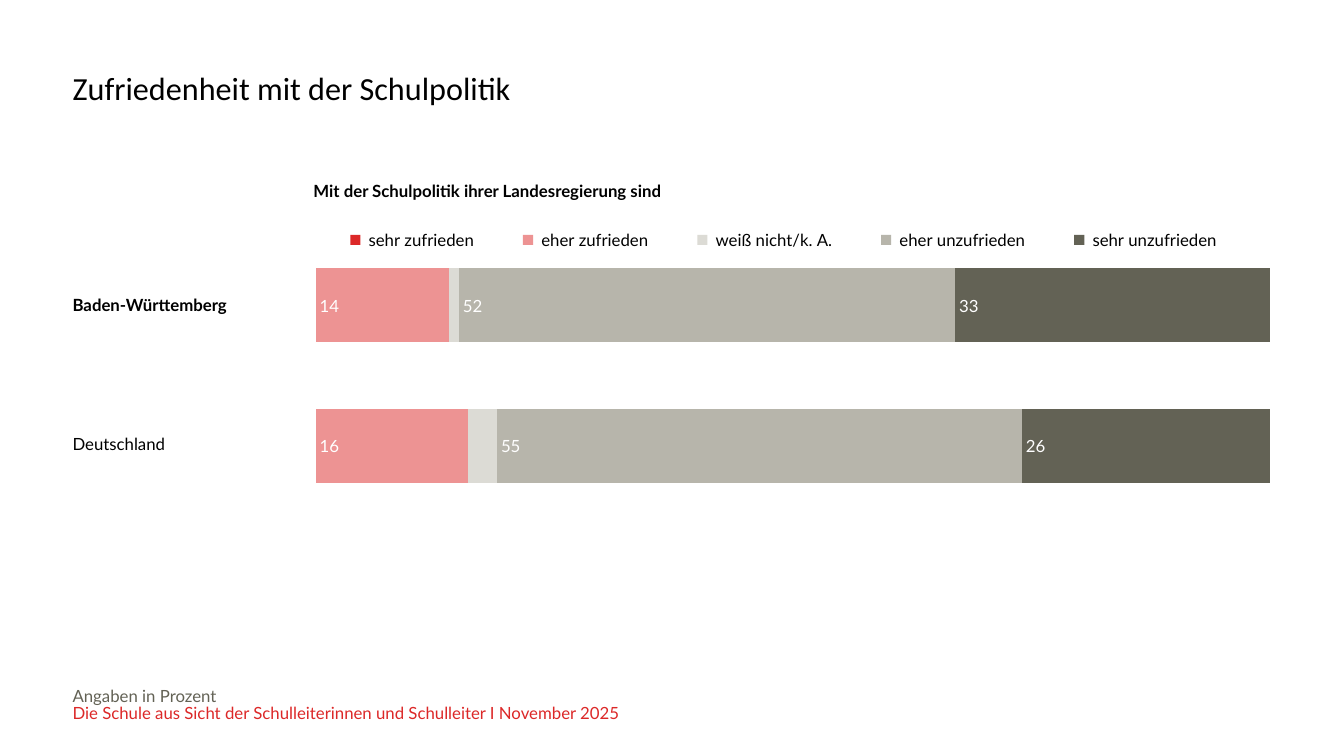
"""Build a slide on how satisfied heads are with school policy."""
from dataclasses import dataclass
from typing import Optional

from lxml.etree import SubElement
from pptx import Presentation
from pptx.chart.data import CategoryChartData
from pptx.dml.color import RGBColor
from pptx.enum.chart import XL_CHART_TYPE, XL_LABEL_POSITION, XL_LEGEND_POSITION
from pptx.enum.text import MSO_ANCHOR
from pptx.oxml import parse_xml
from pptx.oxml.ns import nsdecls, qn
from pptx.util import Pt

BLACK, WHITE, RED, DARK = "000000", "FFFFFF", "DC2828", "636255"
LEFT = 51.84


@dataclass
class Line:
    text: str
    color: str = BLACK
    size: float = 12
    bold: bool = False
    font: str = "Lato"
    space: float = 0.85


@dataclass
class Band:
    name: str
    color: str
    vals: tuple
    pos: Optional[XL_LABEL_POSITION] = XL_LABEL_POSITION.INSIDE_BASE


@dataclass
class Grid:
    left: float
    top: float
    cols: list
    high: float
    lines: list
    anchor: MSO_ANCHOR


BANDS = [
    Band(" sehr zufrieden", RED, (None, None), XL_LABEL_POSITION.CENTER),
    Band(" eher zufrieden", "ED9393", (14, 16)),
    Band(" weiß nicht/k. A.", "DCDBD5", (1, 3), None),
    Band(" eher unzufrieden", "B7B5AB", (52, 55)),
    Band(" sehr unzufrieden", DARK, (33, 26)),
]
GRIDS = [
    Grid(223.92, 127.44, [706.32], 15.84,
         [Line("Mit der Schulpolitik ihrer Landesregierung sind", bold=True)],
         MSO_ANCHOR.BOTTOM),
    Grid(LEFT, 169.2, [114.48, 2.16, 56.16], 99.36,
         [Line("Baden-Württemberg", bold=True), Line("Deutschland")],
         MSO_ANCHOR.MIDDLE),
]


def paint(color: str) -> RGBColor:
    """Turn a hex string into a colour."""
    return RGBColor.from_string(color)


def style(font, line: Line) -> None:
    """Set name, size, weight and colour of a font."""
    font.name, font.size, font.bold = line.font, Pt(line.size), line.bold
    font.color.rgb = paint(line.color)


def write(frame, lines: list) -> None:
    """Fill a text frame with styled lines."""
    frame.text = "\n".join(line.text for line in lines)
    for para, line in zip(frame.paragraphs, lines):
        para.line_spacing = line.space
        for run in para.runs:
            style(run.font, line)


def add_box(slide, top: float, wide: float, high: float, lines: list) -> None:
    """Add a text box without margins at the left edge."""
    frame = slide.shapes.add_textbox(Pt(LEFT), Pt(top), Pt(wide), Pt(high)).text_frame
    frame.word_wrap = True
    frame.margin_left = frame.margin_right = frame.margin_top = frame.margin_bottom = 0
    write(frame, lines)


def add_grid(slide, grid: Grid) -> None:
    """Add a plain table with text in its first column."""
    rows = len(grid.lines)
    table = slide.shapes.add_table(
        rows, len(grid.cols), Pt(grid.left), Pt(grid.top),
        Pt(sum(grid.cols)), Pt(grid.high * rows)).table
    table.first_row = table.horz_banding = False
    for col, wide in zip(table.columns, grid.cols):
        col.width = Pt(wide)
    for cell in table.iter_cells():
        cell.fill.background()
        cell.margin_left = cell.margin_right = cell.margin_top = cell.margin_bottom = 0
        cell.vertical_anchor = grid.anchor
    for row, line in enumerate(grid.lines):
        write(table.cell(row, 0).text_frame, [line])


def place(part, index: int, box: tuple, inner: bool = False) -> None:
    """Give a chart part a fixed place as shares of the chart."""
    for old in part.findall(qn("c:layout")):
        part.remove(old)
    layout = parse_xml(f"<c:layout {nsdecls('c')}/>")
    manual = SubElement(layout, qn("c:manualLayout"))
    items = [("layoutTarget", "inner")] if inner else []
    items += [("xMode", "edge"), ("yMode", "edge"), *zip("xywh", box)]
    for name, value in items:
        SubElement(manual, qn(f"c:{name}")).set("val", str(value))
    part.insert(index, layout)


def add_bars(slide) -> None:
    """Add the stacked bar chart with its legend."""
    data = CategoryChartData()
    data.categories = ["1", "2"]
    for band in BANDS:
        data.add_series(band.name, band.vals)
    chart = slide.shapes.add_chart(
        XL_CHART_TYPE.BAR_STACKED, Pt(133.2), Pt(136.08), Pt(782.64), Pt(293.76), data).chart
    style(chart.font, Line(""))
    chart.has_title = False
    cats, scale = chart.category_axis, chart.value_axis
    cats.reverse_order = True
    scale.minimum_scale, scale.maximum_scale, scale.major_unit = 0, 100, 20
    scale.has_major_gridlines = False
    cats.visible = scale.visible = False

    chart.has_legend = True
    legend = chart.legend
    legend.position = XL_LEGEND_POSITION.TOP
    legend.include_in_layout = False
    style(legend.font, Line(""))
    place(legend._element, 1, (0.11, 0.08, 0.87, 0.08))
    place(chart._chartSpace.chart.plotArea, 0, (0.118, 0.108, 0.871, 0.684), True)

    plot = chart.plots[0]
    plot.gap_width, plot.overlap, plot.vary_by_categories = 90, 100, False
    for band, bar in zip(BANDS, plot.series):
        bar.format.fill.solid()
        bar.format.fill.fore_color.rgb = paint(band.color)
        if band.pos is not None:
            labels = bar.data_labels
            labels.show_value = True
            labels.position = band.pos
            style(labels.font, Line("", WHITE))


def main() -> None:
    """Build and save the slide."""
    deck = Presentation()
    deck.slide_width, deck.slide_height = Pt(960), Pt(540)
    slide = deck.slides.add_slide(deck.slide_layouts[6])
    add_box(slide, 51.84, 879.12, 65.52, [
        Line("Zufriedenheit mit der Schulpolitik", size=23, font="Calibri", space=0.9)])
    add_box(slide, 491.76, 706.32, 28.8, [
        Line("Angaben in Prozent", DARK),
        Line("Die Schule aus Sicht der Schulleiterinnen und Schulleiter I November 2025", RED)])
    add_bars(slide)
    for grid in GRIDS:
        add_grid(slide, grid)
    deck.save("out.pptx")


if __name__ == "__main__":
    main()
